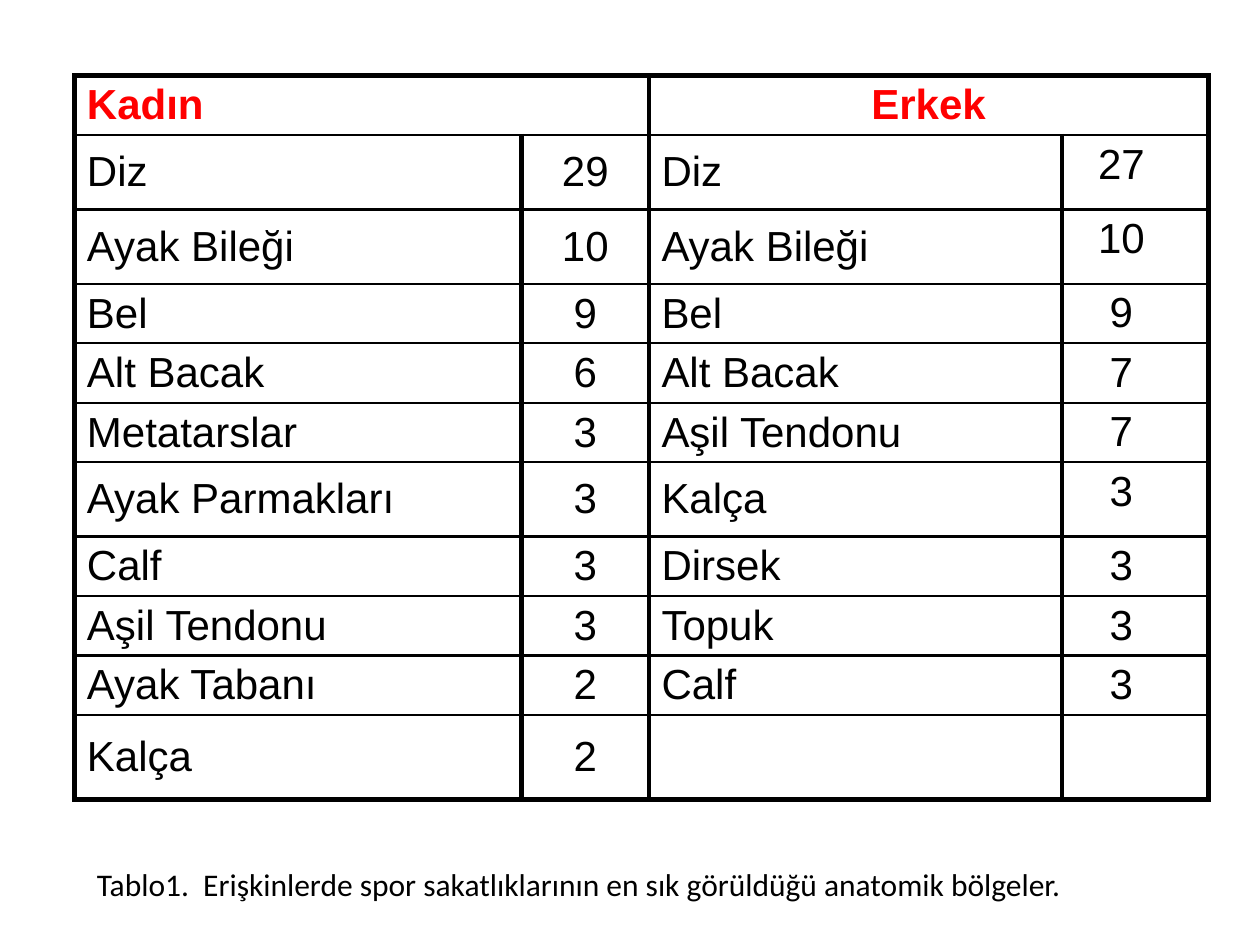
from dataclasses import dataclass

from lxml import etree
from pptx import Presentation
from pptx import util as u
from pptx.dml.color import RGBColor
from pptx.enum import text
from pptx.oxml.ns import qn


@dataclass(frozen=True)
class Theme:
    ink: str = "000000"
    accent: str = "FF0000"
    table_font: str = "Arial"
    caption_font: str = "Calibri"
    table_size: int = 24
    caption_size: int = 18
    thick: float = 3
    thin: float = 1.5


LEFT, CENTER = text.PP_ALIGN.LEFT, text.PP_ALIGN.CENTER
TOP, MIDDLE = text.MSO_ANCHOR.TOP, text.MSO_ANCHOR.MIDDLE

# Table content: women's region and share, men's region and share
HEADINGS = ("Kadın", "", "Erkek", "")
INJURIES = [
    ("Diz", "29", "Diz", "27"),
    ("Ayak Bileği", "10", "Ayak Bileği", "10"),
    ("Bel", "9", "Bel", "9"),
    ("Alt Bacak", "6", "Alt Bacak", "7"),
    ("Metatarslar", "3", "Aşil Tendonu", "7"),
    ("Ayak Parmakları", "3", "Kalça", "3"),
    ("Calf", "3", "Dirsek", "3"),
    ("Aşil Tendonu", "3", "Topuk", "3"),
    ("Ayak Tabanı", "2", "Calf", "3"),
    ("Kalça", "2", "", ""),
]
COLUMN_WIDTHS = (3.55, 1.01, 3.28, 1.16)
SHORT_ROW, TALL_ROW, LAST_ROW = 0.36, 0.59, 0.67
TALL_ROWS = (1, 2, 6)
# Alignment, anchor and right margin of each body column
COLUMN_STYLES = (
    (LEFT, MIDDLE, 0.1),
    (CENTER, MIDDLE, 0.1),
    (LEFT, MIDDLE, 0.1),
    (CENTER, TOP, 0.32),
)


class SlideBuilder:
    def __init__(self, page, theme):
        self.page = page
        self.theme = theme

    def add_words(self, para, words, align, **style):
        para.alignment = align
        span = para.add_run()
        span.text = words
        span.font.color.rgb = RGBColor.from_string(style.pop("color", self.theme.ink))
        for name, value in style.items():
            setattr(span.font, name, value)

    def border(self, cell, widths):
        properties = cell._tc.get_or_add_tcPr()
        for side in "LRTB":
            line = etree.SubElement(properties, qn(f"a:ln{side}"), w=str(u.Pt(widths[side])))
            fill = etree.SubElement(line, qn("a:solidFill"))
            etree.SubElement(fill, qn("a:srgbClr"), val=self.theme.ink)

    def table(self, left, top, rows, heights):
        theme = self.theme
        frame = self.page.shapes.add_table(
            len(rows), len(COLUMN_WIDTHS), u.Inches(left), u.Inches(top),
            u.Inches(sum(COLUMN_WIDTHS)), u.Inches(sum(heights)))
        grid = frame.table
        grid.first_row = grid.horz_banding = False
        for column, width in zip(grid.columns, COLUMN_WIDTHS):
            column.width = u.Inches(width)
        for row, height in zip(grid.rows, heights):
            row.height = u.Inches(height)

        # Headings span a region column and its share column
        for start in (0, 2):
            grid.cell(0, start).merge(grid.cell(0, start + 1))

        last = len(rows) - 1
        for r, row in enumerate(rows):
            for c, words in enumerate(row):
                cell = grid.cell(r, c)
                self.border(cell, {
                    "L": theme.thick,
                    "R": theme.thick,
                    "T": theme.thick if r == 0 else theme.thin,
                    "B": theme.thick if r == last else theme.thin,
                })
                cell.fill.background()
                align, anchor, margin = COLUMN_STYLES[c]
                style = {"size": u.Pt(theme.table_size), "name": theme.table_font}
                if r == 0:
                    align, anchor = (CENTER if c == 2 else LEFT), TOP
                    style.update(bold=True, color=theme.accent)
                cell.vertical_anchor = anchor
                cell.margin_right = u.Inches(margin)
                if words:
                    self.add_words(cell.text_frame.paragraphs[0], words, align, **style)

    def caption(self, left, top, width, height, words):
        box = self.page.shapes.add_textbox(*map(u.Inches, (left, top, width, height)))
        frame = box.text_frame
        frame.word_wrap = True
        frame.auto_size = text.MSO_AUTO_SIZE.SHAPE_TO_FIT_TEXT
        self.add_words(frame.paragraphs[0], words, LEFT,
                       size=u.Pt(self.theme.caption_size), name=self.theme.caption_font)


def main():
    deck = Presentation()
    deck.slide_width, deck.slide_height = u.Inches(10), u.Inches(7.5)
    builder = SlideBuilder(deck.slides.add_slide(deck.slide_layouts[6]), Theme())

    # Injury table
    rows = [HEADINGS, *INJURIES]
    heights = [TALL_ROW if r in TALL_ROWS else SHORT_ROW for r in range(len(rows))]
    heights[-1] = LAST_ROW
    builder.table(0.59, 0.6, rows, heights)

    # Table caption
    builder.caption(0.67, 6.82, 8.82, 0.4,
                    "Tablo1.  Erişkinlerde spor sakatlıklarının en sık görüldüğü anatomik bölgeler.")

    deck.save("out.pptx")


if __name__ == "__main__":
    main()
